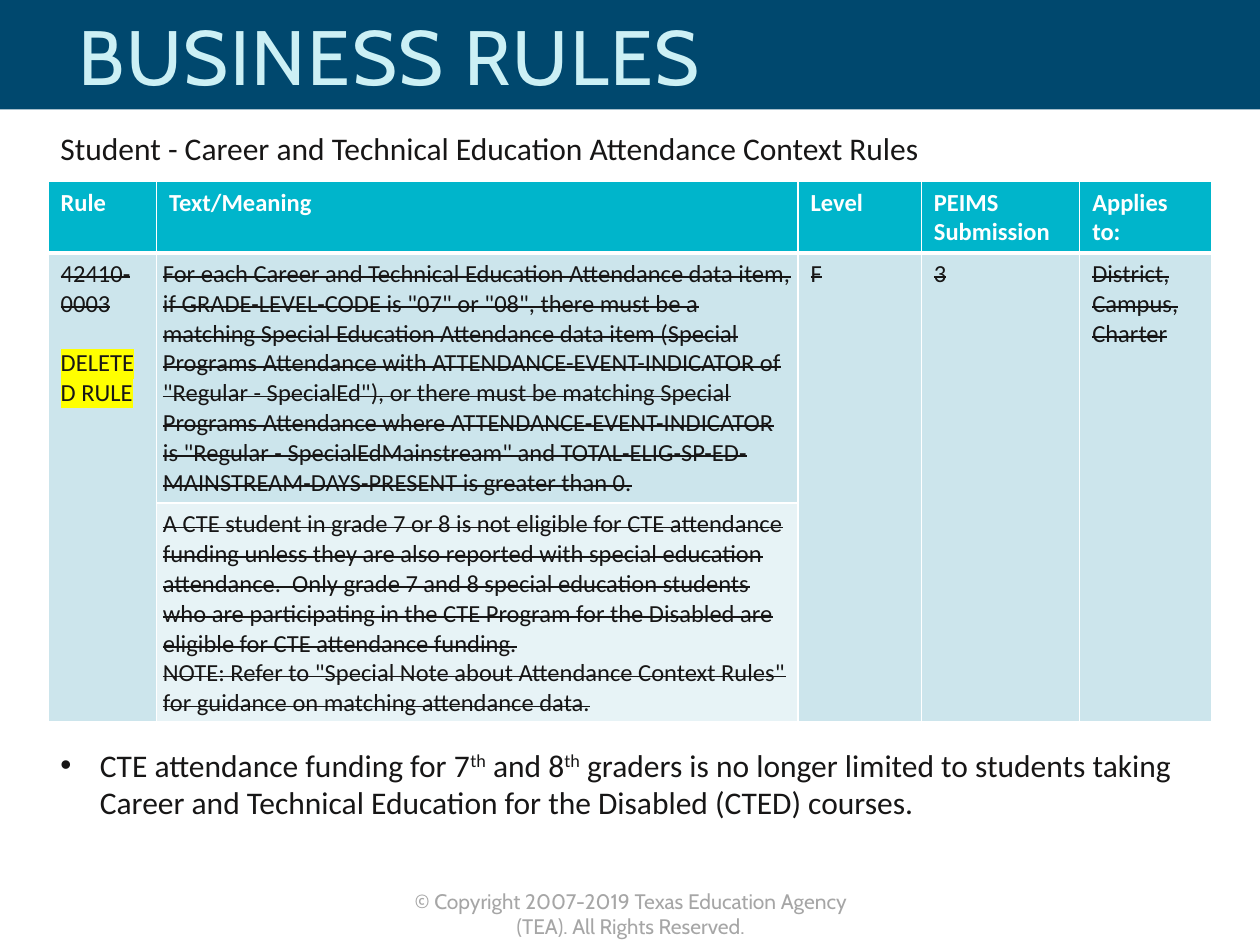
from dataclasses import dataclass

from lxml import etree
from pptx import Presentation
from pptx.dml.color import RGBColor
from pptx.enum.shapes import MSO_SHAPE
from pptx.enum.text import MSO_ANCHOR, PP_ALIGN
from pptx.oxml.ns import qn
from pptx.util import Pt

RECT = MSO_SHAPE.RECTANGLE
MIDDLE = MSO_ANCHOR.MIDDLE
CENTER = PP_ALIGN.CENTER

WHITE = RGBColor(0xFF, 0xFF, 0xFF)
NAVY = RGBColor(0x00, 0x48, 0x6E)
ICE = RGBColor(0xCC, 0xF0, 0xF5)
TEAL = RGBColor(0x00, 0xB5, 0xCB)
PALE = RGBColor(0xCC, 0xE5, 0xEC)
PALER = RGBColor(0xE7, 0xF3, 0xF6)
INK = RGBColor(0x17, 0x16, 0x16)
GRAY = RGBColor(0xA6, 0xA6, 0xA6)
YELLOW = RGBColor(0xFF, 0xFF, 0x00)

COLS = (62, 366.5, 70.5, 90.5, 75.5)
ROWS = (40, 143, 124)
INSET = 3.6


@dataclass
class Cell:
    row: int
    col: int
    lines: tuple
    fill: RGBColor = PALE
    rows: int = 1
    inset: bool = False


CELLS = (
    Cell(0, 0, ("Rule",), TEAL),
    Cell(0, 1, ("Text/Meaning",), TEAL),
    Cell(0, 2, ("Level",), TEAL),
    Cell(0, 3, ("PEIMS", "Submission"), TEAL),
    Cell(0, 4, ("Applies to:",), TEAL),
    Cell(1, 0, ("42410-0003",), rows=2),
    Cell(1, 1, (
        'For each Career and Technical Education Attendance data item, if '
        'GRADE-LEVEL-CODE is "07" or "08", there must be a matching Special '
        'Education Attendance data item (Special Programs Attendance with '
        'ATTENDANCE-EVENT-INDICATOR of "Regular - SpecialEd"), or there must be '
        'matching Special Programs Attendance where ATTENDANCE-EVENT-INDICATOR is '
        '"Regular - SpecialEdMainstream" and '
        'TOTAL-ELIG-SP-ED-MAINSTREAM-DAYS-PRESENT is greater than 0.',
    ), inset=True),
    Cell(1, 2, ("F",), rows=2),
    Cell(1, 3, ("3",), rows=2),
    Cell(1, 4, ("District,", "Campus,", "Charter"), rows=2),
    Cell(2, 1, (
        'A CTE student in grade 7 or 8 is not eligible for CTE attendance funding '
        'unless they are also reported with special education attendance.  Only '
        'grade 7 and 8 special education students who are participating in the CTE '
        'Program for the Disabled are eligible for CTE attendance funding.',
        'NOTE: Refer to "Special Note about Attendance Context Rules" for guidance '
        'on matching attendance data.',
    ), PALER, inset=True),
)


def add_run(p, text: str, *, size: float = 14, font: str = "Calibri",
            color: RGBColor = INK, bold: bool = False, strike: bool = False,
            highlight: RGBColor | None = None, raised: bool = False,
            spacing: int = 0) -> None:
    r = p.add_run()
    r.text = text
    r.font.size = Pt(size)
    r.font.bold = bold
    r.font.color.rgb = color
    rPr = r.font._element
    if highlight is not None:
        mark = etree.SubElement(rPr, qn("a:highlight"))
        etree.SubElement(mark, qn("a:srgbClr"), val=str(highlight))
    r.font.name = font
    if strike:
        rPr.set("strike", "sngStrike")
    if raised:
        rPr.set("baseline", "30000")
    if spacing:
        rPr.set("spc", str(spacing * 100))


def add_text_box(s, x: float, y: float, w: float, h: float):
    tf = s.shapes.add_textbox(Pt(x), Pt(y), Pt(w), Pt(h)).text_frame
    tf.word_wrap = True
    return tf


def set_borders(cell, top: float, bottom: float) -> None:
    tcPr = cell._tc.get_or_add_tcPr()
    for side, width in (("L", 1), ("R", 1), ("T", top), ("B", bottom)):
        ln = etree.SubElement(tcPr, qn(f"a:ln{side}"), w=str(Pt(width)))
        fill = etree.SubElement(ln, qn("a:solidFill"))
        etree.SubElement(fill, qn("a:srgbClr"), val=str(WHITE))


def fill_cell(table, item: Cell) -> None:
    header = item.row == 0
    for row in range(item.row, item.row + item.rows):
        part = table.cell(row, item.col)
        set_borders(part, 3 if row == 1 else 1, 3 if header else 1)
        part.fill.solid()
        part.fill.fore_color.rgb = item.fill
    cell = table.cell(item.row, item.col)
    if item.rows > 1:
        cell.merge(table.cell(item.row + item.rows - 1, item.col))
    if item.inset:
        cell.margin_left = cell.margin_right = Pt(INSET)
        cell.margin_top = cell.margin_bottom = Pt(INSET)
    tf = cell.text_frame
    for i, line in enumerate(item.lines):
        p = tf.add_paragraph() if i else tf.paragraphs[0]
        add_run(p, line, color=WHITE if header else INK, bold=header,
                strike=not header)


def add_rules_table(s) -> None:
    table = s.shapes.add_table(len(ROWS), len(COLS), Pt(27.5), Pt(103.7),
                               Pt(sum(COLS)), Pt(sum(ROWS))).table
    table.horz_banding = False
    for column, width in zip(table.columns, COLS):
        column.width = Pt(width)
    for row, height in zip(table.rows, ROWS):
        row.height = Pt(height)
    for item in CELLS:
        fill_cell(table, item)
    p = table.cell(1, 0).text_frame.add_paragraph()
    p.space_before = Pt(17)
    add_run(p, "DELETED RULE", highlight=YELLOW)


def add_note(s) -> None:
    p = add_text_box(s, 27.5, 422.5, 664.5, 51).paragraphs[0]
    pPr = p._p.get_or_add_pPr()
    pPr.set("marL", str(Pt(22.5)))
    pPr.set("indent", str(-Pt(22.5)))
    etree.SubElement(pPr, qn("a:buFont"), typeface="Arial")
    etree.SubElement(pPr, qn("a:buChar"), char="•")
    parts = (
        "CTE attendance funding for 7", "th", " and 8", "th",
        " graders is no longer limited to students taking Career and Technical "
        "Education for the Disabled (CTED) courses.",
    )
    for text in parts:
        add_run(p, text, size=18, raised=text == "th")


def main() -> None:
    prs = Presentation()
    prs.slide_width, prs.slide_height = Pt(720), Pt(540)
    s = prs.slides.add_slide(prs.slide_layouts[6])

    band = s.shapes.add_shape(RECT, Pt(0), Pt(0), Pt(720), Pt(62.5))
    band.shadow.inherit = False
    band.fill.solid()
    band.fill.fore_color.rgb = NAVY
    band.line.fill.background()

    p = add_text_box(s, 219, 504, 283, 21.5).paragraphs[0]
    p.alignment = CENTER
    add_run(p, "© Copyright 2007-2019 Texas Education Agency (TEA). "
            "All Rights Reserved.", size=12, font="Cabin", color=GRAY)

    tf = add_text_box(s, 38, 3.5, 596, 62.5)
    tf.vertical_anchor = MIDDLE
    p = tf.paragraphs[0]
    p.line_spacing = 0.9
    add_run(p, "BUSINESS RULES", size=44, font="Cabin", color=ICE, spacing=1)

    add_rules_table(s)
    p = add_text_box(s, 27.5, 70, 590, 29).paragraphs[0]
    add_run(p, "Student - Career and Technical Education Attendance Context Rules",
            size=18)
    add_note(s)
    prs.save("out.pptx")


if __name__ == "__main__":
    main()
